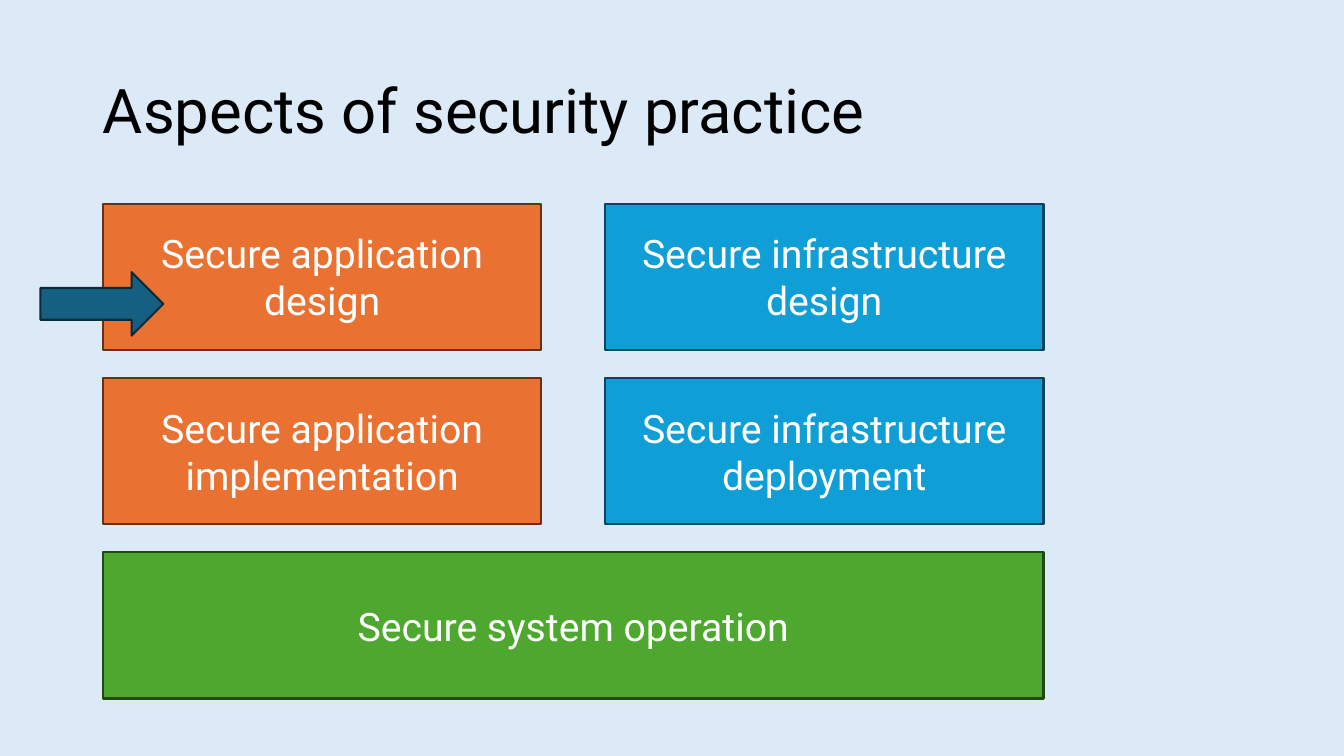
import pptx
import pptx.util
import pptx.dml.color
import pptx.enum.shapes
import pptx.enum.text

TITLE = "Aspects of security practice"
PRACTICES = [
    ("Secure application design", "application", 0, 0, 1),
    ("Secure application implementation", "application", 0, 1, 1),
    ("Secure infrastructure design", "infrastructure", 1, 0, 1),
    ("Secure infrastructure deployment", "infrastructure", 1, 1, 1),
    ("Secure system operation", "operation", 0, 2, 2),
]
COLOURS = {
    "background": "DCEAF7",
    "title": "000000",
    "label": "FFFFFF",
    "application": "E97132",
    "application line": "663216",
    "infrastructure": "0F9ED5",
    "infrastructure line": "07455D",
    "operation": "4EA72E",
    "operation line": "224914",
    "pointer": "156082",
    "pointer line": "092A39",
}
FONT = "Roboto"
LEFT, TOP = 1.02, 2.02
BOX_WIDTH, BOX_HEIGHT = 4.35, 1.45
COLUMN_STEP, ROW_STEP = 4.98, 1.73

Inches = pptx.util.Inches
Pt = pptx.util.Pt
SHAPES = pptx.enum.shapes.MSO_SHAPE
MIDDLE = pptx.enum.text.MSO_ANCHOR.MIDDLE
ALIGN = pptx.enum.text.PP_ALIGN


def colour(name):
    return pptx.dml.color.RGBColor.from_string(COLOURS[name])


def write(frame, text, size, ink, align):
    frame.word_wrap = True
    frame.vertical_anchor = MIDDLE
    paragraph = frame.paragraphs[0]
    paragraph.alignment = align
    run = paragraph.add_run()
    run.text = text
    run.font.name = FONT
    run.font.size = Pt(size)
    run.font.color.rgb = colour(ink)
    return paragraph


def add_block(slide, kind, area, paint):
    block = slide.shapes.add_shape(kind, *map(Inches, area))
    block.shadow.inherit = False
    block.fill.solid()
    block.fill.fore_color.rgb = colour(paint)
    block.line.color.rgb = colour(paint + " line")
    block.line.width = Pt(1.5)
    return block


def main():
    deck = pptx.Presentation()
    deck.slide_width, deck.slide_height = Inches(13.33), Inches(7.5)
    slide = deck.slides.add_slide(deck.slide_layouts[5])
    slide.background.fill.solid()
    slide.background.fill.fore_color.rgb = colour("background")

    title = slide.shapes.title
    title.left, title.top = Inches(0.92), Inches(0.4)
    title.width, title.height = Inches(11.5), Inches(1.45)
    heading = write(title.text_frame, TITLE, 44, "title", ALIGN.LEFT)
    heading.line_spacing = 0.9

    for label, group, column, row, span in PRACTICES:
        area = (
            LEFT + column * COLUMN_STEP,
            TOP + row * ROW_STEP,
            BOX_WIDTH + (span - 1) * COLUMN_STEP,
            BOX_HEIGHT,
        )
        practice = add_block(slide, SHAPES.RECTANGLE, area, group)
        write(practice.text_frame, label, 28, "label", ALIGN.CENTER)

    add_block(slide, SHAPES.RIGHT_ARROW, (0.4, 2.7, 1.22, 0.63), "pointer")
    deck.save("out.pptx")


if __name__ == "__main__":
    main()
